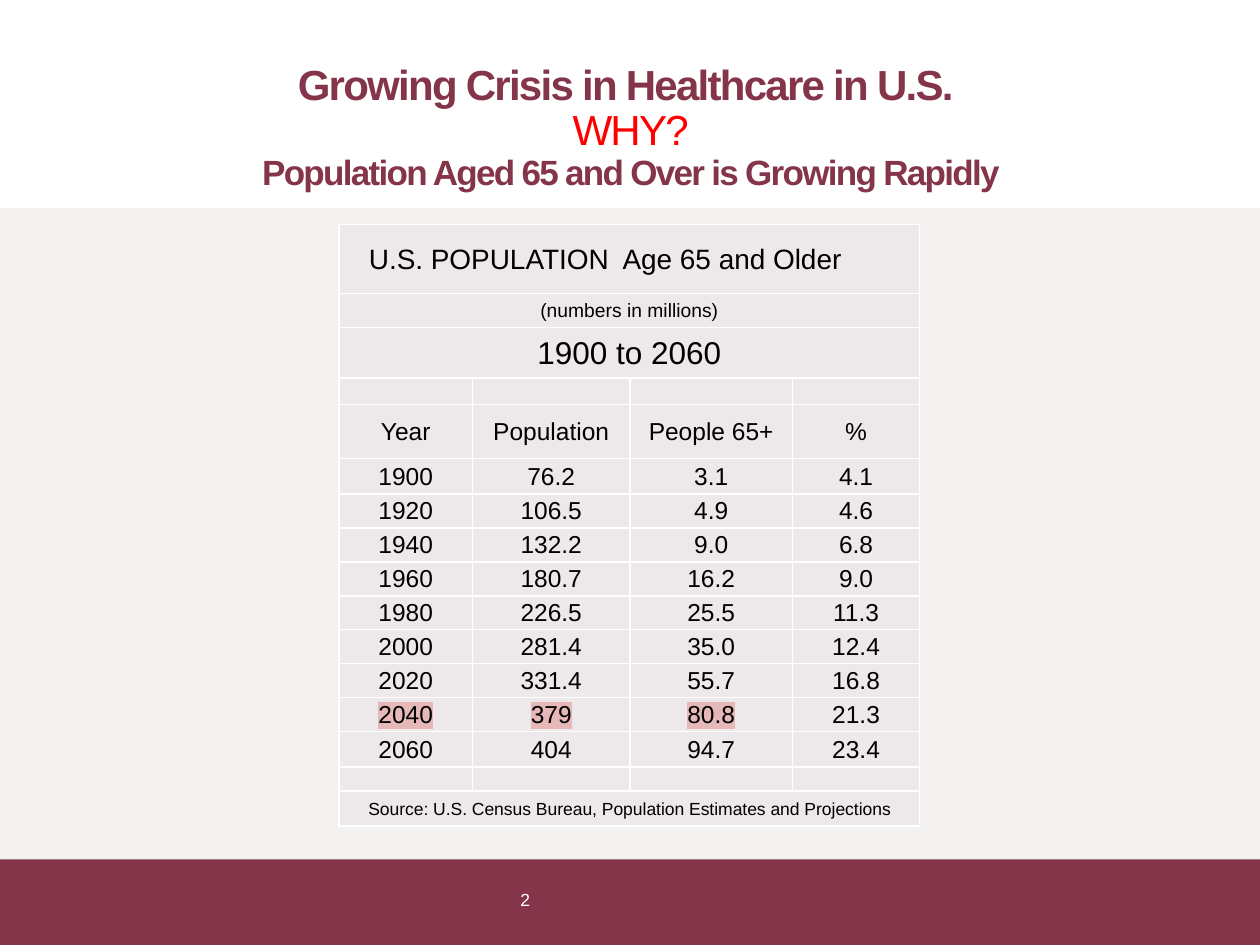
from copy import deepcopy
from lxml import etree
from pptx import Presentation
from pptx import util as u
from pptx.dml.color import RGBColor
from pptx.enum import shapes, text
from pptx.oxml import ns

WIDE, HIGH = u.Inches(10), u.Inches(7.5)
COLS, ROWS = 100, 75
WINE, WHITE, RED, BLACK = "843549", "FFFFFF", "FF0000", "000000"
PALE, CELL, PINK = "F4F2F1", "EDE8E9", "E6B8B7"
HEADS = ["Year", "Population", "People 65+", "%"]
DATA = [
    ["1900", "76.2", "3.1", "4.1"],
    ["1920", "106.5", "4.9", "4.6"],
    ["1940", "132.2", "9.0", "6.8"],
    ["1960", "180.7", "16.2", "9.0"],
    ["1980", "226.5", "25.5", "11.3"],
    ["2000", "281.4", "35.0", "12.4"],
    ["2020", "331.4", "55.7", "16.8"],
    ["2040", "379", "80.8", "21.3"],
    ["2060", "404", "94.7", "23.4"],
]
BLANK = [""] * 4
GRID = [
    (["U.S. POPULATION  Age 65 and Older"], 16, 5.5),
    (["(numbers in millions)"], 11, 2.7),
    (["1900 to 2060"], 18, 4),
    (BLANK, 8, 2.1),
    (HEADS, 14, 4.3),
    *[(row, 14, 2.8 if row in (DATA[0], DATA[-1]) else 2.7) for row in DATA],
    (BLANK, 8, 1.9),
    (["Source: U.S. Census Bureau, Population Estimates and Projections"], 10, 2.8),
]
SPANS = [10.6, 12.5, 12.9, 10.1]


def across(n):
    return int(WIDE * n / COLS)


def down(n):
    return int(HIGH * n / ROWS)


def place(box):
    x, y, w, h = box
    return across(x), down(y), across(w), down(h)


def tint(color):
    return RGBColor.from_string(color)


def paint(fill, color):
    fill.solid()
    fill.fore_color.rgb = tint(color)


def write(para, words, size, color, bold=False, tight=False):
    run = para.add_run()
    run.text = words
    font = run.font
    font.size, font.name, font.bold = u.Pt(size), "Arial", bold
    font.color.rgb = tint(color)
    if tight:
        run._r.get_or_add_rPr().set("spc", "-100")
    return run


def clear(frame, anchor):
    frame.margin_left = frame.margin_right = 0
    frame.margin_top = frame.margin_bottom = 0
    frame.auto_size = text.MSO_AUTO_SIZE.NONE
    frame.word_wrap = True
    frame.vertical_anchor = anchor


def band(slide, box, color, depth):
    shape = slide.shapes.add_shape(shapes.MSO_SHAPE.RECTANGLE, *place(box))
    shape.shadow.inherit = False
    paint(shape.fill, color)
    shape.line.fill.background()
    slide.shapes._spTree.insert(depth, shape._element)


def title(slide, box):
    head = slide.shapes.title
    head.left, head.top, head.width, head.height = place(box)
    clear(head.text_frame, text.MSO_ANCHOR.MIDDLE)
    para = head.text_frame.paragraphs[0]
    para.alignment = text.PP_ALIGN.CENTER
    para.line_spacing = 0.9
    lines = [
        ("Growing Crisis in Healthcare in U.S. ", 24, WINE, True),
        ("WHY?", 24, RED, False),
        ("Population Aged 65 and Over is Growing Rapidly", 20, WINE, True),
    ]
    for i, line in enumerate(lines):
        run = write(para, *line, tight=True)
        if i < len(lines) - 1:
            para.add_line_break()
            para._p[-1].append(deepcopy(run._r.rPr))


def number(slide, box):
    frame = slide.shapes.add_textbox(*place(box)).text_frame
    clear(frame, text.MSO_ANCHOR.BOTTOM)
    write(frame.paragraphs[0], "2", 10, WHITE, tight=True)


def edge(cell):
    props = cell._tc.get_or_add_tcPr()
    for i, side in enumerate(("lnL", "lnR", "lnT", "lnB")):
        line = etree.Element(ns.qn("a:" + side), w=str(u.Pt(1)))
        fill = etree.SubElement(line, ns.qn("a:solidFill"))
        etree.SubElement(fill, ns.qn("a:srgbClr"), val=WHITE)
        props.insert(i, line)


def mark(run):
    light = etree.Element(ns.qn("a:highlight"))
    etree.SubElement(light, ns.qn("a:srgbClr"), val=PINK)
    run._r.rPr.find(ns.qn("a:solidFill")).addnext(light)


def fill_cell(cell, words, size):
    cell.margin_left = cell.margin_right = cell.margin_top = u.Inches(0.01)
    cell.margin_bottom = 0
    cell.vertical_anchor = text.MSO_ANCHOR.MIDDLE
    para = cell.text_frame.paragraphs[0]
    para.alignment = text.PP_ALIGN.CENTER
    if words:
        return write(para, words, size, BLACK)
    etree.SubElement(para._p, ns.qn("a:endParaRPr"), sz=str(size * 100))


def table(slide, box):
    grid = slide.shapes.add_table(len(GRID), len(SPANS), *place(box)).table
    for col, span in zip(grid.columns, SPANS):
        col.width = across(span)
    for i, (row, size, tall) in enumerate(GRID):
        grid.rows[i].height = down(tall)
        for j in range(len(SPANS)):
            cell = grid.cell(i, j)
            paint(cell.fill, CELL)
            edge(cell)
            if j < len(row):
                run = fill_cell(cell, row[j], size)
                if row[0] == "2040" and j < 3:
                    mark(run)
        if len(row) == 1:
            grid.cell(i, 0).merge(grid.cell(i, len(SPANS) - 1))
    grid.cell(0, 0).margin_right = across(3.9)


def main():
    deck = Presentation()
    deck.slide_width, deck.slide_height = WIDE, HIGH
    slide = deck.slides.add_slide(deck.slide_layouts[5])
    paint(slide.background.fill, PALE)
    band(slide, (0, 68.2, COLS, 6.8), WINE, 2)
    band(slide, (0, 0, COLS, 16.5), WHITE, 3)
    title(slide, (2.7, 2.5, 94.7, 15.4))
    number(slide, (41.3, 68.2, 17.5, 4))
    table(slide, (26.9, 17.8, sum(SPANS), sum(row[2] for row in GRID)))
    deck.save("out.pptx")


if __name__ == "__main__":
    main()
